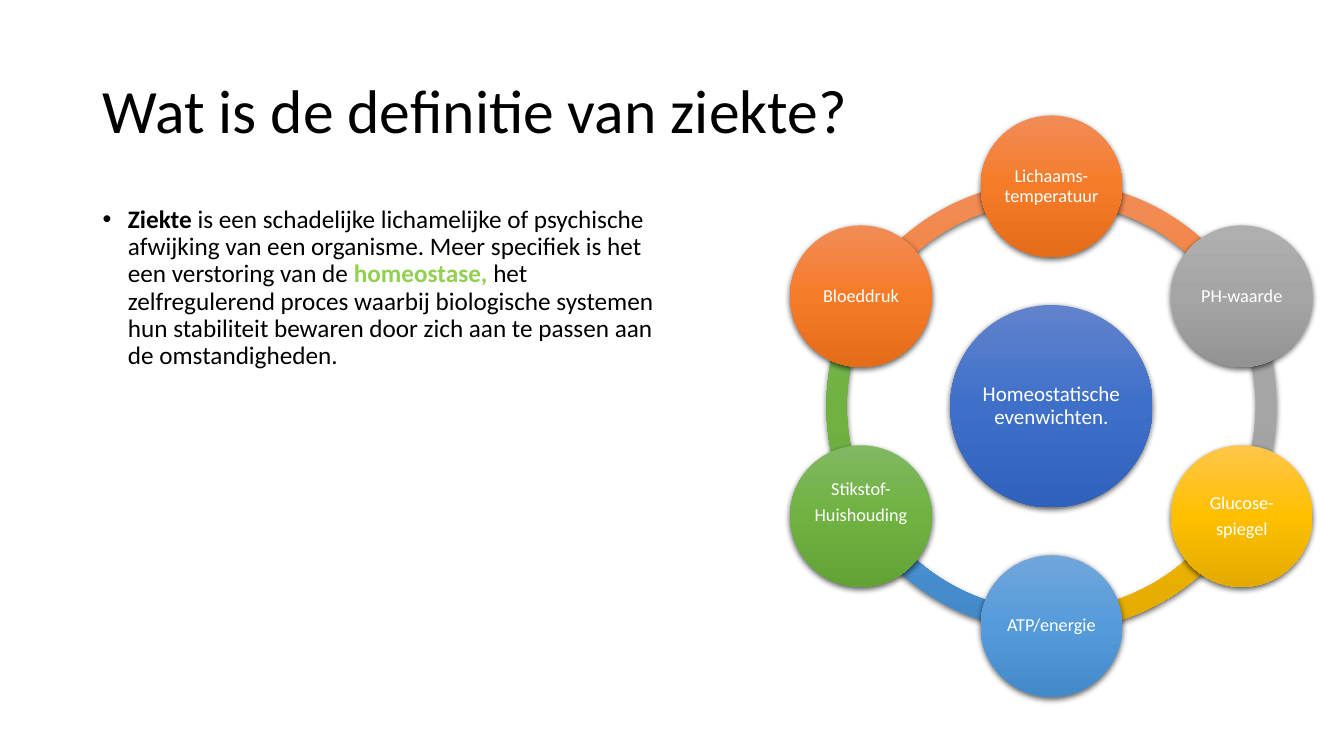
from math import cos, radians, sin

from lxml import etree
from pptx import Presentation
from pptx.dml.color import RGBColor
from pptx.enum.shapes import MSO_SHAPE
from pptx.enum.text import MSO_ANCHOR, MSO_AUTO_SIZE, PP_ALIGN
from pptx.oxml.ns import qn
from pptx.util import Cm, Pt

BLACK = RGBColor(0x00, 0x00, 0x00)
WHITE = RGBColor(0xFF, 0xFF, 0xFF)
LIME = RGBColor(0x92, 0xD0, 0x50)


def shades(*codes):
    return [RGBColor.from_string(code) for code in codes]


# Gradients from top to bottom
NAVY = shades("6183CB", "3E70CA", "3062BB")
ORANGE = shades("F18C57", "F67B28", "E56C19")
GRAY = shades("AFAFAF", "A5A5A5", "939393")
YELLOW = shades("FFC64B", "FFC000", "E3AB00")
BLUE = shades("71A6DB", "559BDB", "448ACA")
GREEN = shades("81B861", "6FB242", "62A336")

# Label lines, gradient and bottom inset in cm, clockwise from the top
BALANCES = [
    (["Lichaams-temperatuur"], ORANGE, 0.05),
    (["PH-waarde"], GRAY, 0.05),
    (["Glucose-", "spiegel"], YELLOW, 0.05),
    (["ATP/energie"], BLUE, 0.05),
    (["Stikstof-", "Huishouding"], GREEN, 0.73),
    (["Bloeddruk"], ORANGE, 0.05),
]

DEFINITION = [
    ("Ziekte", BLACK, True),
    (" is een schadelijke lichamelijke of psychische afwijking van een organisme. "
     "Meer specifiek is het een verstoring van de ", BLACK, False),
    ("homeostase,", LIME, True),
    (" het zelfregulerend proces waarbij biologische systemen hun stabiliteit "
     "bewaren door zich aan te passen aan de omstandigheden.", BLACK, False),
]


def set_all(target, values):
    for name, value in values.items():
        setattr(target, name, value)


def add_xml(parent, tag, **attributes):
    return etree.SubElement(parent, qn(tag), attributes)


def add_glossy(slide, kind, center_x, center_y, size, gradient):
    """Add a square preset shape with a vertical gradient and a soft shadow."""
    shape = slide.shapes.add_shape(
        kind, Cm(center_x - size / 2), Cm(center_y - size / 2), Cm(size), Cm(size))
    shape.fill.gradient()
    shape.fill.gradient_angle = 270
    shape.line.fill.background()
    shape.shadow.inherit = False
    properties = shape._element.spPr

    stops = properties.find(".//" + qn("a:gsLst"))
    for stop in list(stops):
        stops.remove(stop)
    for position, color in zip(("0", "50000", "100000"), gradient):
        add_xml(add_xml(stops, "a:gs", pos=position), "a:srgbClr", val=str(color))

    shadow = add_xml(properties.find(qn("a:effectLst")), "a:outerShdw",
                     blurRad="57150", dist="19050", dir="5400000",
                     algn="ctr", rotWithShape="0")
    add_xml(add_xml(shadow, "a:srgbClr", val="000000"), "a:alpha", val="63000")
    return shape


def write_label(circle, lines, size, bottom=0.05):
    frame = circle.text_frame
    set_all(frame, {"word_wrap": True, "vertical_anchor": MSO_ANCHOR.MIDDLE,
                    "margin_left": Cm(0.05), "margin_right": Cm(0.05),
                    "margin_top": Cm(0.05), "margin_bottom": Cm(bottom)})
    frame.text = "\n".join(lines)
    for paragraph in frame.paragraphs:
        set_all(paragraph, {"alignment": PP_ALIGN.CENTER, "line_spacing": 0.9,
                            "space_after": Pt(0.35 * size)})
        set_all(paragraph.font, {"name": "Calibri", "size": Pt(size)})
        paragraph.font.color.rgb = WHITE


def place(placeholder, left, top, width, height):
    set_all(placeholder, {"left": Cm(left), "top": Cm(top),
                          "width": Cm(width), "height": Cm(height)})
    set_all(placeholder.text_frame, {"word_wrap": True,
                                     "auto_size": MSO_AUTO_SIZE.NONE})


def fill_title(slide, *box):
    title = slide.shapes.title
    place(title, *box)
    title.text_frame.vertical_anchor = MSO_ANCHOR.MIDDLE
    title.text_frame.text = "Wat is de definitie van ziekte?"
    heading = title.text_frame.paragraphs[0]
    set_all(heading, {"alignment": PP_ALIGN.LEFT, "line_spacing": 0.9})
    set_all(heading.font, {"name": "Calibri", "size": Pt(44)})
    heading.font.color.rgb = BLACK


def fill_definition(slide, *box):
    body = slide.placeholders[1]
    place(body, *box)
    body.text_frame.vertical_anchor = MSO_ANCHOR.TOP
    paragraph = body.text_frame.paragraphs[0]
    bullet = paragraph._p.get_or_add_pPr()
    set_all(paragraph, {"line_spacing": 0.9, "space_before": Pt(0)})
    bullet.set("marL", str(Cm(0.64)))
    bullet.set("indent", str(-Cm(0.64)))
    add_xml(bullet, "a:buFont", typeface="Arial")
    add_xml(bullet, "a:buChar", char="•")
    for text, color, bold in DEFINITION:
        run = paragraph.add_run()
        run.text = text
        set_all(run.font, {"name": "Calibri", "size": Pt(18), "bold": bold})
        run.font.color.rgb = color


def draw_cycle(slide, left, top, size):
    """Ring of balances around a hub; the box is the square around the ring."""
    center_x, center_y = left + size / 2, top + size / 2
    orbit, step = 0.489 * size, 360 / len(BALANCES)
    angles = [270 + step * index for index in range(len(BALANCES))]

    # Ring segments, each in the colour of the balance it starts from
    for angle, (_, gradient, _) in reversed(list(zip(angles, BALANCES))):
        arc = add_glossy(slide, MSO_SHAPE.BLOCK_ARC, center_x, center_y, size, gradient)
        # One degree is 60000 units, and adjustments count in 100000
        for index, value in enumerate((angle % 360 * 0.6, (angle + step) % 360 * 0.6, 0.045)):
            arc.adjustments[index] = value

    # Hub
    hub = add_glossy(slide, MSO_SHAPE.OVAL, center_x, center_y, 0.45 * size, NAVY)
    write_label(hub, ["Homeostatische evenwichten."], 15)

    # Balances
    for angle, (lines, gradient, bottom) in zip(angles, BALANCES):
        balance = add_glossy(slide, MSO_SHAPE.OVAL,
                             center_x + orbit * cos(radians(angle)),
                             center_y + orbit * sin(radians(angle)),
                             0.315 * size, gradient)
        write_label(balance, lines, 13, bottom)


def main():
    deck = Presentation()
    set_all(deck, {"slide_width": Cm(33.87), "slide_height": Cm(19.05)})
    slide = deck.slides.add_slide(deck.slide_layouts[1])
    fill_title(slide, 2.33, 1.02, 29.21, 3.68)
    fill_definition(slide, 2.33, 5.08, 14.4, 12.09)
    draw_cycle(slide, 20.83, 4.57, 11.33)
    deck.save("out.pptx")


if __name__ == "__main__":
    main()
